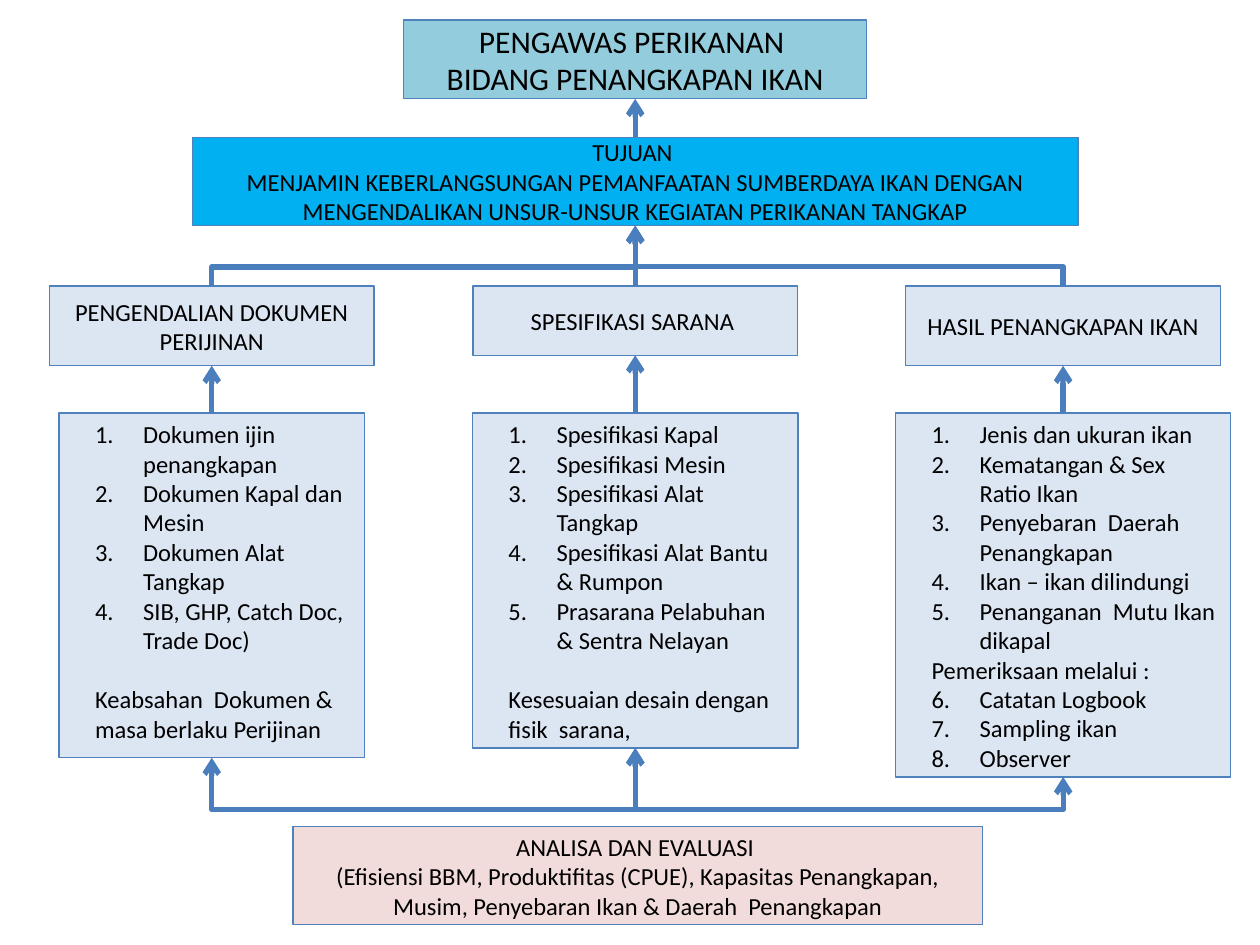
"""Build a one-slide chart of fisheries supervision for fish capture."""
from lxml import etree
from pptx import Presentation
from pptx.dml.color import RGBColor
from pptx.enum.shapes import MSO_CONNECTOR, MSO_SHAPE
from pptx.enum.text import MSO_ANCHOR, PP_ALIGN
from pptx.oxml.ns import qn
from pptx.util import Pt

RECTANGLE = MSO_SHAPE.RECTANGLE
STRAIGHT, ELBOW = MSO_CONNECTOR.STRAIGHT, MSO_CONNECTOR.ELBOW
TOP, MIDDLE = MSO_ANCHOR.TOP, MSO_ANCHOR.MIDDLE
LEFT, CENTER = PP_ALIGN.LEFT, PP_ALIGN.CENTER
TOP_SIDE, BOTTOM_SIDE = 0, 2

BLACK = RGBColor(0x00, 0x00, 0x00)
TEAL = RGBColor(0x93, 0xCD, 0xDD)
BRIGHT_BLUE = RGBColor(0x00, 0xB0, 0xF0)
PALE_BLUE = RGBColor(0xDC, 0xE6, 0xF2)
PINK = RGBColor(0xF2, 0xDC, 0xDB)
BORDER_BLUE = RGBColor(0x4F, 0x81, 0xBD)
ARROW_BLUE = RGBColor(0x4B, 0x7E, 0xBC)

MIDDLE_X = 363
HEADING_TOP, LIST_TOP = 163.5, 236
UPPER_BEND, LOWER_BEND = 152.5, 462.5
TEXT_INDENT, NUMBER_INDENT = 13.5, 27

COLUMNS = [
    {
        "center": 121, "heading": "PENGENDALIAN DOKUMEN PERIJINAN",
        "heading_size": (185.5, 45.5), "list_size": (174.5, 197),
        "items": ["Dokumen ijin penangkapan", "Dokumen Kapal dan Mesin",
                  "Dokumen Alat Tangkap", "SIB, GHP, Catch Doc, Trade Doc)"],
        "note": "Keabsahan  Dokumen & masa berlaku Perijinan", "note_gap": 17,
        "later_items": [],
    },
    {
        "center": MIDDLE_X, "heading": "SPESIFIKASI SARANA ",
        "heading_size": (185.5, 39.5), "list_size": (186, 191.5),
        "items": ["Spesifikasi Kapal", "Spesifikasi Mesin", "Spesifikasi Alat Tangkap",
                  "Spesifikasi Alat Bantu  & Rumpon",
                  "Prasarana Pelabuhan & Sentra Nelayan"],
        "note": "Kesesuaian desain dengan fisik  sarana,", "note_gap": 17,
        "later_items": [],
    },
    {
        "center": 607.5, "heading": "HASIL PENANGKAPAN IKAN",
        "heading_size": (180, 45.5), "list_size": (191.5, 208),
        "items": ["Jenis dan ukuran ikan", "Kematangan & Sex Ratio Ikan",
                  "Penyebaran  Daerah Penangkapan", "Ikan – ikan dilindungi",
                  "Penanganan  Mutu Ikan dikapal"],
        "note": "Pemeriksaan melalui :", "note_gap": 0,
        "later_items": ["Catatan Logbook", "Sampling ikan", "Observer"],
    },
]


def add_box(slide, center, top, width, height, fill, anchor=MIDDLE):
    """Add a bordered rectangle centred on a vertical axis."""
    shape = slide.shapes.add_shape(
        RECTANGLE, Pt(center - width / 2), Pt(top), Pt(width), Pt(height))
    shape.shadow.inherit = False
    shape.fill.solid()
    shape.fill.fore_color.rgb = fill
    shape.line.color.rgb = BORDER_BLUE
    shape.line.width = Pt(0.75)
    shape.text_frame.word_wrap = True
    shape.text_frame.vertical_anchor = anchor
    return shape


def add_text(shape, text, size=14, align=CENTER, indent=0, number_from=None, space_before=0):
    """Add one formatted paragraph, numbered when number_from is given."""
    frame = shape.text_frame
    paragraph = frame.add_paragraph() if frame.text else frame.paragraphs[0]
    paragraph.text = text
    paragraph.alignment = align
    paragraph.space_before = Pt(space_before)
    for run in paragraph.runs:
        run.font.name = "Calibri"
        run.font.size = Pt(size)
        run.font.color.rgb = BLACK
    properties = paragraph._p.get_or_add_pPr()
    hanging = NUMBER_INDENT + 0.5 if number_from else 0
    properties.set("marL", str(Pt(indent + hanging)))
    properties.set("indent", str(-Pt(hanging)))
    if number_from:
        numbering = etree.SubElement(properties, qn("a:buAutoNum"), type="arabicPeriod")
        if number_from > 1:
            numbering.set("startAt", str(number_from))


def style_arrow(connector, both_ends=False):
    """Give a connector its line and arrowheads, without a shadow."""
    connector.line.color.rgb = ARROW_BLUE
    connector.line.width = Pt(3)
    line = connector.line._get_or_add_ln()
    for end in ("a:headEnd", "a:tailEnd") if both_ends else ("a:tailEnd",):
        etree.SubElement(line, qn(end), type="arrow")
    etree.SubElement(connector._element.spPr, qn("a:effectLst"))


def add_straight_arrow(slide, lower, upper):
    """Join the top of one box to the bottom of the box above it."""
    connector = slide.shapes.add_connector(STRAIGHT, 0, 0, 0, 0)
    connector.begin_connect(lower, TOP_SIDE)
    connector.end_connect(upper, BOTTOM_SIDE)
    style_arrow(connector)


def add_elbow_arrow(slide, start, end, bend, both_ends=False):
    """Add an elbow that runs vertically, across at height bend, and vertically again."""
    (start_x, start_y), (end_x, end_y) = start, end
    width, height = abs(end_y - start_y), abs(end_x - start_x)
    left = (start_x + end_x - width) / 2
    top = (start_y + end_y - height) / 2
    connector = slide.shapes.add_connector(
        ELBOW, Pt(left), Pt(top), Pt(left + width), Pt(top + height))
    properties = connector._element.spPr
    transform = properties.find(qn("a:xfrm"))
    transform.set("rot", str(270 * 60000))
    if end_y > start_y:
        transform.set("flipH", "1")
    if end_x < start_x:
        transform.set("flipV", "1")
    adjustments = properties.find(qn("a:prstGeom")).find(qn("a:avLst"))
    ratio = round((bend - start_y) / (end_y - start_y) * 100000)
    etree.SubElement(adjustments, qn("a:gd"), name="adj1", fmla=f"val {ratio}")
    style_arrow(connector, both_ends)


def add_column(slide, column):
    """Add a heading with its list below, and return both boxes."""
    center = column["center"]
    heading = add_box(slide, center, HEADING_TOP, *column["heading_size"], PALE_BLUE)
    add_text(heading, column["heading"])
    details = add_box(slide, center, LIST_TOP, *column["list_size"], PALE_BLUE, TOP)
    for item in column["items"]:
        add_text(details, item, align=LEFT, indent=TEXT_INDENT, number_from=1)
    add_text(details, column["note"], align=LEFT, indent=TEXT_INDENT,
             space_before=column["note_gap"])
    for item in column["later_items"]:
        add_text(details, item, align=LEFT, indent=TEXT_INDENT,
                 number_from=len(column["items"]) + 1)
    add_straight_arrow(slide, details, heading)
    return heading, details


def main():
    """Build and save the presentation."""
    presentation = Presentation()
    presentation.slide_width, presentation.slide_height = Pt(720), Pt(540)
    slide = presentation.slides.add_slide(presentation.slide_layouts[6])

    title = add_box(slide, MIDDLE_X, 11.5, 264.5, 45, TEAL)
    add_text(title, "PENGAWAS PERIKANAN \vBIDANG PENANGKAPAN IKAN", size=18)
    goal = add_box(slide, MIDDLE_X, 78.5, 506, 50.5, BRIGHT_BLUE)
    add_text(goal, "TUJUAN ")
    add_text(goal, "MENJAMIN KEBERLANGSUNGAN PEMANFAATAN SUMBERDAYA IKAN DENGAN "
                   "MENGENDALIKAN UNSUR-UNSUR KEGIATAN PERIKANAN TANGKAP")
    analysis = add_box(slide, 364.5, 472.5, 394, 56, PINK)
    add_text(analysis, "ANALISA DAN EVALUASI ")
    add_text(analysis, "(Efisiensi BBM, Produktifitas (CPUE), Kapasitas Penangkapan, "
                       "Musim, Penyebaran Ikan & Daerah  Penangkapan")

    boxes = [add_column(slide, column) for column in COLUMNS]
    add_straight_arrow(slide, goal, title)
    add_straight_arrow(slide, boxes[1][0], goal)

    for column in (COLUMNS[0], COLUMNS[2]):
        add_elbow_arrow(slide, (column["center"], HEADING_TOP), (MIDDLE_X, 129), UPPER_BEND)
    list_ends = [(column["center"], LIST_TOP + column["list_size"][1]) for column in COLUMNS]
    for start, end in zip(list_ends, list_ends[1:]):
        add_elbow_arrow(slide, start, end, LOWER_BEND, both_ends=True)

    presentation.save("out.pptx")


if __name__ == "__main__":
    main()
